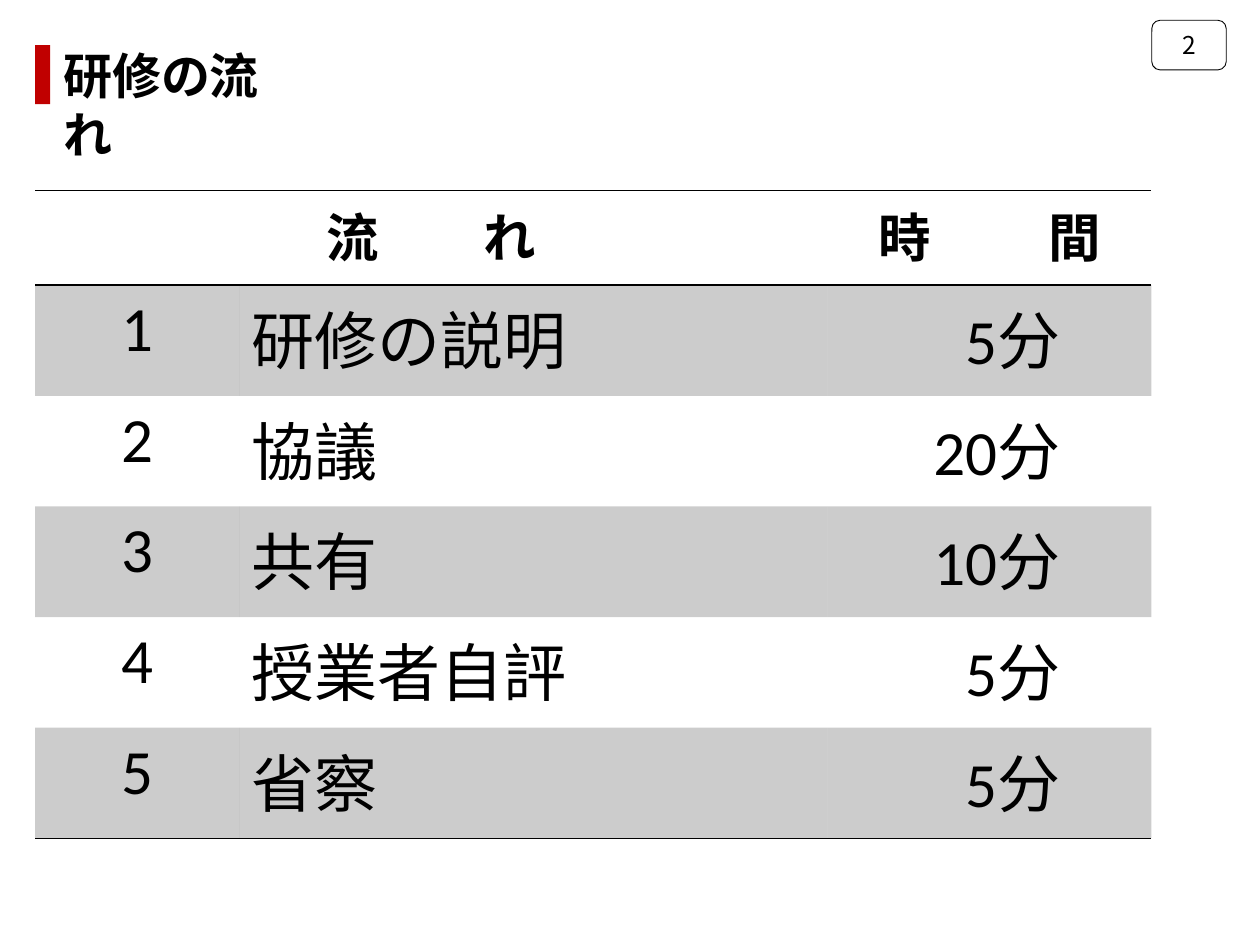
from dataclasses import dataclass
from lxml.etree import SubElement
from pptx import Presentation
from pptx.dml.color import RGBColor as RGB
from pptx.enum.shapes import MSO_SHAPE as Shape
from pptx.enum.text import MSO_ANCHOR as Anchor, MSO_AUTO_SIZE as Auto, PP_ALIGN as Align
from pptx.oxml import parse_xml
from pptx.oxml.ns import qn, nsdecls
from pptx.util import Cm, Pt


@dataclass(frozen=True)
class Theme:
    black: RGB = RGB(0, 0, 0)
    white: RGB = RGB(255, 255, 255)
    red: RGB = RGB(0xC0, 0, 0)
    shade: int = 20
    page: int = 14
    title: int = 28
    head: int = 30
    body: int = 36
    asian: str = "Noto Sans CJK JP"
    latin: str = "Calibri"
    plain: str = "Arial"


theme = Theme()


def style(par, size, face, bold=False, align=Align.LEFT):
    par.alignment = align
    for run in par.runs:
        font = run.font
        font.size, font.bold, font.name = Pt(size), bold, face
        font.color.rgb = theme.black
        SubElement(run._r.get_or_add_rPr(), qn("a:ea"), typeface=theme.asian)


def rule(cell, *sides):
    """Draw 1 pt borders on the given sides, T before B."""
    props = cell._tc.get_or_add_tcPr()
    for i, side in enumerate(sides):
        props.insert(i, parse_xml(
            f'<a:ln{side} {nsdecls("a")} w="12700"><a:solidFill>'
            f'<a:srgbClr val="{theme.black}"/></a:solidFill></a:ln{side}>'))


deck = Presentation()
deck.slide_width, deck.slide_height = Cm(25.4), Cm(19.05)
slide = deck.slides.add_slide(deck.slide_layouts[5])
shapes = slide.shapes

# Page number
page = shapes.add_shape(Shape.ROUNDED_RECTANGLE, Cm(23.22), Cm(0.41), Cm(1.5), Cm(1))
page.shadow.inherit = False
page.fill.solid()
page.fill.fore_color.rgb = theme.white
page.line.color.rgb = theme.black
page.line.width = Pt(0.5)
page.text_frame.text = "2"
page.text_frame.vertical_anchor = Anchor.MIDDLE
style(page.text_frame.paragraphs[0], theme.page, theme.asian, align=Align.CENTER)

# Title with its red bar
title = shapes.title
title.left, title.top, title.width, title.height = Cm(1.02), Cm(0.79), Cm(5.26), Cm(1.45)
frame = title.text_frame
frame.text = "研修の流れ"
frame.word_wrap = True
frame.auto_size = Auto.NONE
frame.vertical_anchor = Anchor.TOP
style(frame.paragraphs[0], theme.title, theme.asian, bold=True)

bar = shapes.add_shape(Shape.RECTANGLE, Cm(0.71), Cm(0.91), Cm(0.3), Cm(1.19))
bar.shadow.inherit = False
bar.fill.solid()
bar.fill.fore_color.rgb = theme.red
bar.line.fill.background()

# Schedule
steps = [("研修の説明", "5分"), ("協議", "20分"), ("共有", "10分"),
         ("授業者自評", "5分"), ("省察", "5分")]
widths = [4.11, 11.86, 6.53]
head, row = 1.91, 2.23
last = len(steps)
table = shapes.add_table(last + 1, 3, Cm(0.71), Cm(3.84), Cm(sum(widths)),
                         Cm(head + row * last)).table
table.first_row = table.horz_banding = False
# The built-in style without fills or grid
table._tbl.tblPr.find(qn("a:tableStyleId")).text = "{2D5ABB26-0587-4C30-8999-92F81FD0307C}"
for col, width in zip(table.columns, widths):
    col.width = Cm(width)
for i, line in enumerate(table.rows):
    line.height = Cm(row if i else head)

# Headings: two letters set apart by letter spacing
table.cell(0, 0).merge(table.cell(0, 1))
for col, word, gap in [(0, "流れ", 60), (2, "時間", 67)]:
    par = table.cell(0, col).text_frame.paragraphs[0]
    for letter in word:
        par.add_run().text = letter
    style(par, theme.head, theme.latin, bold=True, align=Align.CENTER)
    par.runs[0]._r.get_or_add_rPr().set("spc", str(gap * 100))
for col in range(3):
    rule(table.cell(0, col), "T", "B")

aligns = [Align.CENTER, Align.LEFT, Align.RIGHT]
for i, (step, time) in enumerate(steps, 1):
    for col, text in enumerate([str(i), step, time]):
        cell = table.cell(i, col)
        cell.text_frame.text = text
        face = theme.plain if (i, col) == (last, 1) else theme.latin
        style(cell.text_frame.paragraphs[0], theme.body, face, align=aligns[col])
        if i % 2:
            cell.fill.solid()
            cell.fill.fore_color.rgb = theme.black
            tint = cell._tc.tcPr.find(f".//{qn('a:srgbClr')}")
            SubElement(tint, qn("a:alpha"), val=str(theme.shade * 1000))
        if i == last:
            rule(cell, "B")
    cell.margin_right = Cm(1.84)

deck.save("out.pptx")
